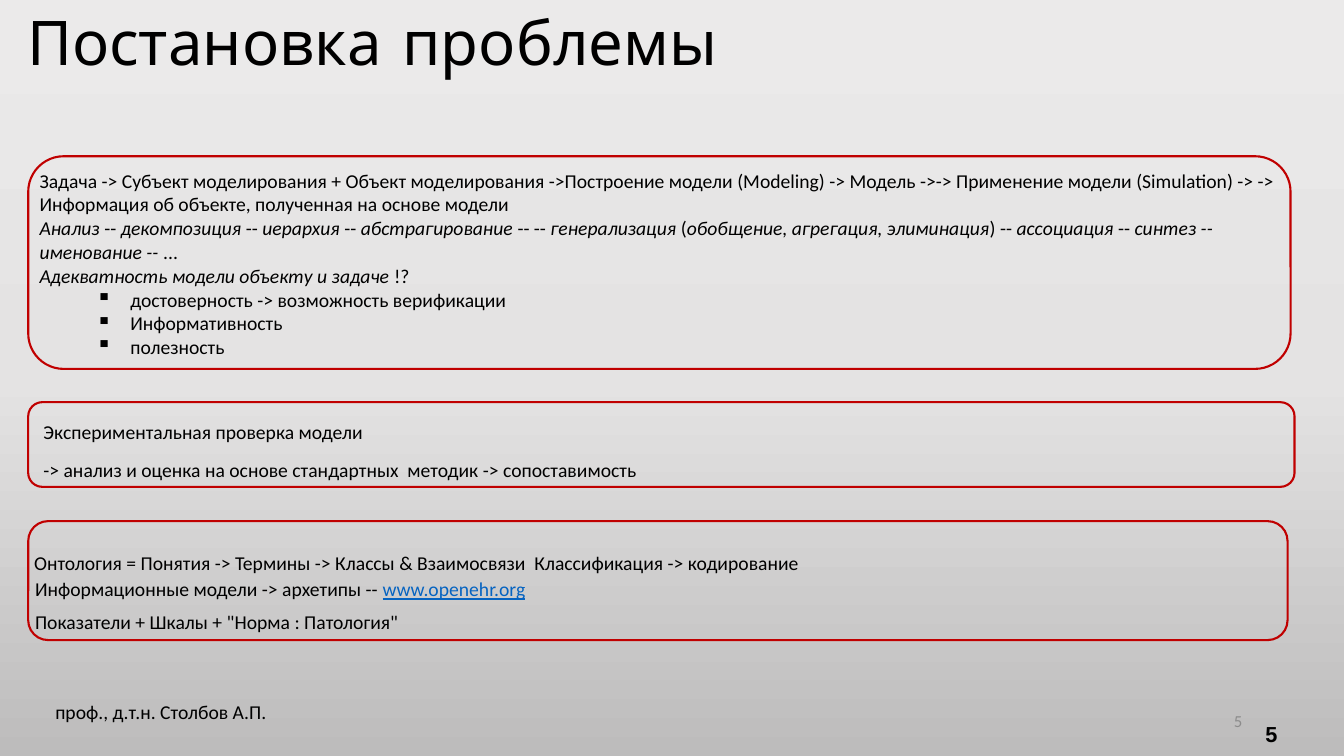
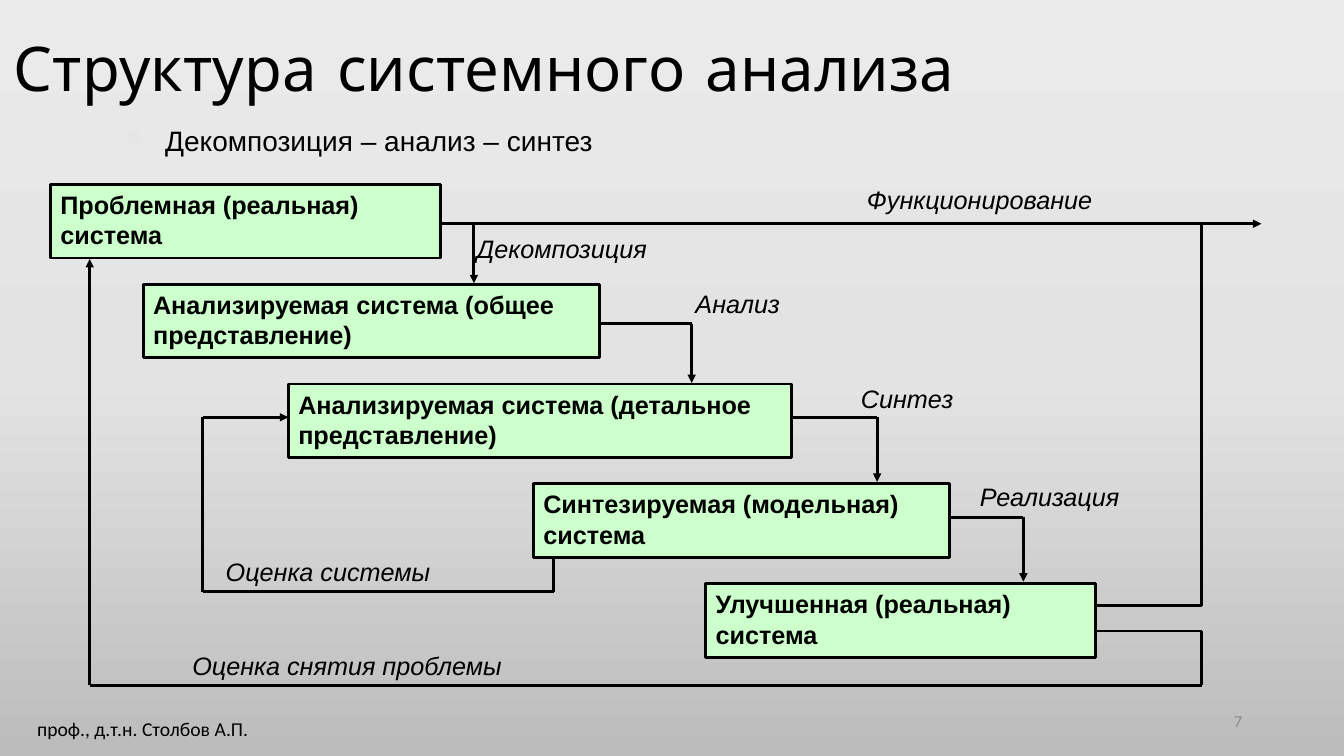
import pptx
import pptx.util
import pptx.dml.color
import pptx.enum.shapes
import pptx.enum.text
import pptx.oxml.ns
from lxml import etree
from pptx.util import Inches

COLORS = {
    "text": "000000",
    "frame": "C00000",
    "link": "0563C1",
    "block": "CCFFCC",
    "number": "8C8C8C",
    "faint bullet": "E7E6E6",
}
BACKGROUND_STOPS = [(0, "EBEAEA"), (50, "E4E3E3"), (100, "BDBCBC")]
AUTHOR = "проф., д.т.н. Столбов А.П."
SHAPES = pptx.enum.shapes.MSO_SHAPE
ANCHORS = pptx.enum.text.MSO_ANCHOR


def rgb(name):
    return pptx.dml.color.RGBColor.from_string(COLORS[name])


def add_xml(parent, tag, **attributes):
    values = {key: str(value) for key, value in attributes.items()}
    return etree.SubElement(parent, pptx.oxml.ns.qn(tag), values)


def emphasis(marked):
    """Split text into runs; parts between asterisks are italic."""
    parts = marked.split("*")
    return [(part, "italic" if index % 2 else "plain")
            for index, part in enumerate(parts) if part]


class Deck:
    def __init__(self):
        self.presentation = pptx.Presentation()
        self.presentation.slide_width = Inches(13.33)
        self.presentation.slide_height = Inches(7.5)
        self.slide = None

    def new_slide(self, title, title_at, number, author_at):
        """Start a slide with its background, title and footer."""
        layout = self.presentation.slide_layouts[6]
        self.slide = self.presentation.slides.add_slide(layout)
        fill = self.slide.background.fill
        fill.gradient()
        fill.gradient_angle = 270
        stops = next(self.slide.element.iter(pptx.oxml.ns.qn("a:gsLst")))
        for stop in list(stops):
            stops.remove(stop)
        for percent, color in BACKGROUND_STOPS:
            stop = add_xml(stops, "a:gs", pos=percent * 1000)
            add_xml(stop, "a:srgbClr", val=color)

        frame = self.text_box(title_at, anchor=ANCHORS.MIDDLE)
        self.paragraph(frame, title, size=44, font="Comic Neue",
                       line_spacing=0.9)
        frame = self.text_box((9.42, 6.95, 3, 0.4), anchor=ANCHORS.MIDDLE)
        paragraph = self.paragraph(frame, number, size=12, color="number")
        paragraph.alignment = pptx.enum.text.PP_ALIGN.RIGHT
        self.paragraph(self.text_box((*author_at, 3, 0.34)), AUTHOR)

    def prepare(self, frame, anchor=ANCHORS.TOP, top_margin=None):
        """Wrap and anchor a text frame; a top margin clears the other margins."""
        frame.word_wrap = True
        frame.vertical_anchor = anchor
        if top_margin is not None:
            frame.margin_left = frame.margin_right = frame.margin_bottom = 0
            frame.margin_top = Inches(top_margin)
        return frame

    def text_box(self, at, **options):
        shape = self.slide.shapes.add_textbox(*map(Inches, at))
        return self.prepare(shape.text_frame, **options)

    def shape(self, kind, at, line, width, fill=None, **options):
        shape = self.slide.shapes.add_shape(kind, *map(Inches, at))
        shape.shadow.inherit = False
        if fill:
            shape.fill.solid()
            shape.fill.fore_color.rgb = rgb(fill)
        else:
            shape.fill.background()
        shape.line.color.rgb = rgb(line)
        shape.line.width = pptx.util.Pt(width)
        return self.prepare(shape.text_frame, **options)

    def red_frame(self, at, top_margin=0.02):
        return self.shape(SHAPES.ROUNDED_RECTANGLE, at, "frame", 1.5,
                          top_margin=top_margin)

    def block(self, at, text):
        frame = self.shape(SHAPES.RECTANGLE, at, "text", 2, fill="block")
        self.paragraph(frame, text, size=18, font="Arial", bold=True)

    def label(self, at, text):
        self.paragraph(self.text_box(at), text, size=18, font="Arial",
                       italic=True)

    def paragraph(self, frame, content, size=14, font="Calibri", color="text",
                  bold=None, italic=None, indent=0, hanging=0, before=0,
                  line_spacing=None, bullet=None):
        """Add a paragraph; content is a string or (text, style) runs,
        bullet is (character, size in percent, colour)."""
        paragraph = frame.paragraphs[0]
        if paragraph.runs:
            paragraph = frame.add_paragraph()
        runs = [(content, "plain")] if isinstance(content, str) else content
        for text, style in runs:
            run = paragraph.add_run()
            run.text = text
            if style == "italic":
                run.font.italic = True
            elif style == "link":
                run.font.underline = True
                run.font.color.rgb = rgb("link")
        paragraph.alignment = pptx.enum.text.PP_ALIGN.LEFT
        if before:
            paragraph.space_before = pptx.util.Pt(before)
        if line_spacing:
            paragraph.line_spacing = line_spacing
        properties = paragraph._p.get_or_add_pPr()
        if indent:
            properties.set("marL", str(Inches(indent)))
            properties.set("indent", str(-Inches(hanging)))
        if bullet:
            character, percent, bullet_color = bullet
            holder = add_xml(properties, "a:buClr")
            add_xml(holder, "a:srgbClr", val=COLORS[bullet_color])
            add_xml(properties, "a:buSzPct", val=percent * 1000)
            add_xml(properties, "a:buChar", char=character)
        paragraph.font.size = pptx.util.Pt(size)
        paragraph.font.name = font
        paragraph.font.color.rgb = rgb(color)
        paragraph.font.bold = bold
        paragraph.font.italic = italic
        return paragraph

    def route(self, points, arrow=True):
        """Join points by straight lines, with an arrowhead on the last one."""
        for start, end in zip(points, points[1:]):
            connector = self.slide.shapes.add_connector(
                pptx.enum.shapes.MSO_CONNECTOR.STRAIGHT,
                *map(Inches, (*start, *end)))
            connector.line.color.rgb = rgb("text")
            connector.line.width = pptx.util.Pt(2)
            if arrow and end == points[-1]:
                add_xml(connector.line._get_or_add_ln(), "a:tailEnd",
                        type="triangle")
            add_xml(connector._element.spPr, "a:effectLst")


def build_problem(deck):
    deck.new_slide("Постановка проблемы", (0.17, 0.03, 11.08, 0.84), "5",
                   (0.45, 6.89))
    points = pptx.util.Pt

    frame = deck.red_frame((0.28, 1.55, 12.52, 2.11))
    deck.paragraph(
        frame, "Задача -> Субъект моделирования + Объект моделирования "
        "->Построение модели (Modeling) -> Модель ->-> Применение модели "
        "(Simulation) -> -> Информация об объекте, полученная на основе "
        "модели", indent=0.01)
    for marked in (
            "*Анализ *-- *декомпозиция *-- *иерархия *-- *абстрагирование *"
            "-- -- *генерализация *(*обобщение, агрегация, элиминация*) -- "
            "*ассоциация *-- *синтез -- именование -- *...",
            "*Адекватность модели объекту и задаче *!?"):
        deck.paragraph(frame, emphasis(marked), indent=0.01, before=0.4)
    for quality in ("достоверность -> возможность верификации",
                    "Информативность", "полезность"):
        deck.paragraph(frame, quality, indent=0.91, hanging=0.34, before=0.1,
                       bullet=("▪", 110, "text"))

    frame = deck.red_frame((0.28, 5.17, 12.49, 1.18))
    deck.paragraph(
        frame, "Онтология = Понятия -> Термины -> Классы & Взаимосвязи  "
        "Классификация -> кодирование", indent=0.01, hanging=0.01,
        line_spacing=points(32.8))
    deck.paragraph(frame, [("Информационные модели -> архетипы -- ", "plain"),
                           ("www.openehr.org", "link")],
                   indent=0.01, before=1.4)
    deck.paragraph(frame, "Показатели + Шкалы + \"Норма : Патология\"",
                   indent=0.01, before=7.1)

    frame = deck.red_frame((0.28, 3.99, 12.56, 0.84), top_margin=0)
    deck.paragraph(frame, "Экспериментальная проверка модели", indent=0.11,
                   line_spacing=points(26.6))
    deck.paragraph(
        frame, "-> анализ и оценка на основе стандартных  методик -> "
        "сопоставимость", indent=0.11, before=2.1, line_spacing=points(24.7))

    frame = deck.text_box((12.51, 7.16, 0.23, 0.25), top_margin=0)
    deck.paragraph(frame, "5", size=15.5, font="Arial", bold=True, indent=0.04,
                   line_spacing=points(18.2))


def build_structure(deck):
    deck.new_slide("Структура системного анализа", (0.04, -0.02, 11.5, 1.45),
                   "7", (0.27, 7.06))
    deck.paragraph(deck.text_box((1.16, 1.24, 6.76, 0.5)),
                   "Декомпозиция – анализ – синтез", size=20, font="Arial",
                   indent=0.38, hanging=0.38, line_spacing=0.8,
                   bullet=("■", 75, "faint bullet"))

    systems = [
        (0.5, 3.87, "Проблемная (реальная) система"),
        (1.42, 4.53, "Анализируемая система (общее представление)"),
        (2.86, 4.99, "Анализируемая система (детальное представление)"),
        (5.29, 4.13, "Синтезируемая (модельная) система"),
        (7, 3.87, "Улучшенная (реальная) система"),
    ]
    for step, (left, width, text) in enumerate(systems):
        deck.block((left, 1.83 + 0.99 * step, width, 0.73), text)

    for points in (
            [(4.37, 2.22), (12.51, 2.22)],
            [(4.7, 2.22), (4.7, 2.81)],
            [(5.94, 3.21), (6.86, 3.21), (6.86, 3.8)],
            [(7.85, 4.14), (8.7, 4.14), (8.7, 4.78)],
            [(9.42, 5.13), (10.15, 5.13), (10.15, 5.77)],
            [(5.49, 5.52), (5.49, 5.87), (2.01, 5.87), (2.01, 4.14),
             (2.86, 4.14)],
            [(10.87, 6.26), (11.92, 6.26), (11.92, 6.8), (0.89, 6.8),
             (0.89, 2.57)]):
        deck.route(points)
    deck.route([(10.87, 6.01), (11.92, 6.01), (11.92, 2.22)], arrow=False)

    for left, top, width, text in (
            (4.63, 2.27, 2.56, "Декомпозиция"),
            (6.8, 2.81, 1.64, "Анализ"),
            (8.44, 3.75, 1.71, "Синтез"),
            (9.62, 4.73, 2.56, "Реализация"),
            (8.5, 1.78, 3.41, "Функционирование"),
            (1.81, 6.4, 4.53, "Оценка снятия проблемы"),
            (2.14, 5.47, 3.15, "Оценка системы")):
        deck.label((left, top, width, 0.4), text)


def main():
    deck = Deck()
    build_problem(deck)
    build_structure(deck)
    deck.presentation.save("out.pptx")


if __name__ == "__main__":
    main()
